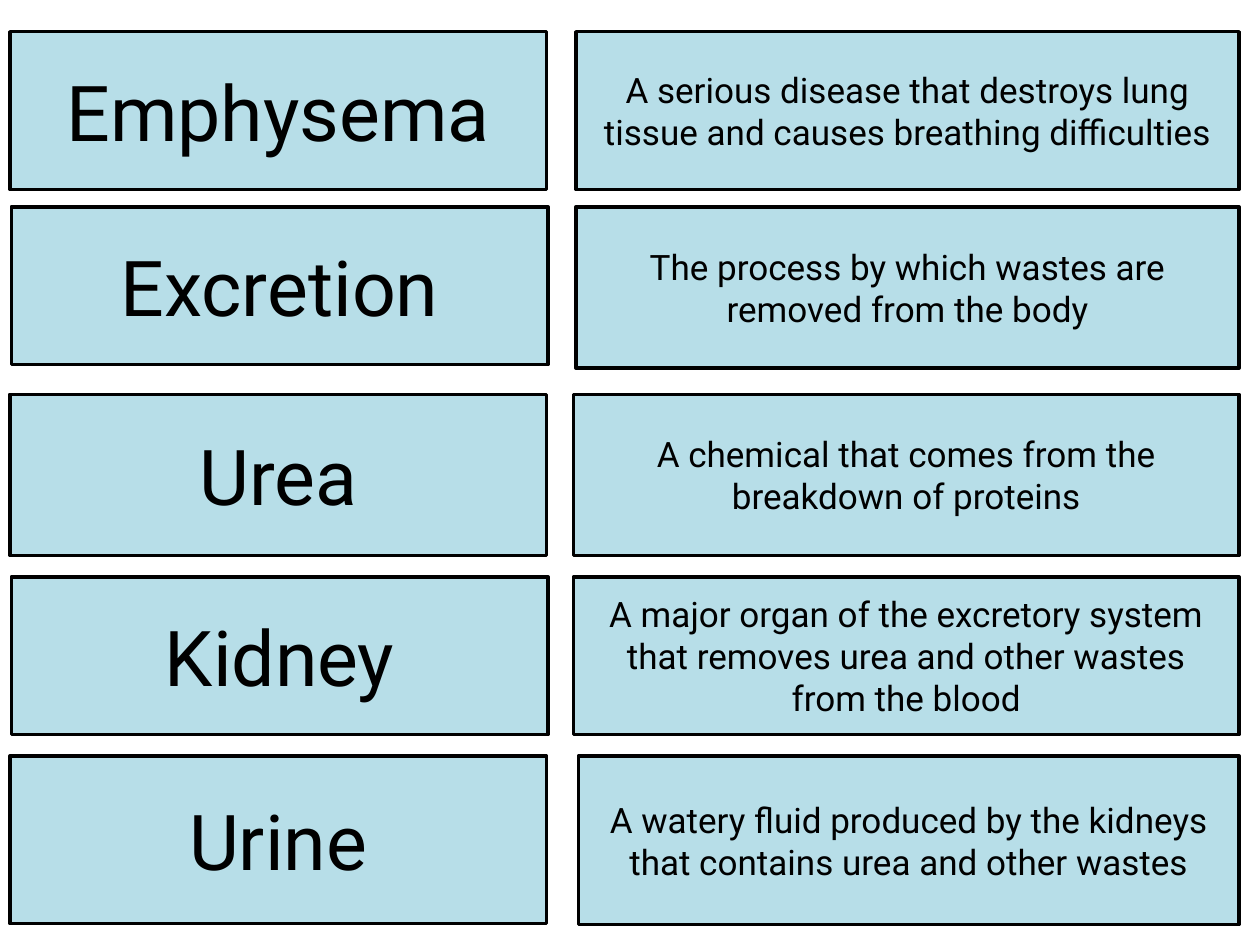
"""Build a slide of vocabulary cards pairing each term with its definition."""
from pptx import Presentation
from pptx import util as u
from pptx.dml.color import RGBColor
from pptx.enum import shapes, text

TERM_WIDTH = 10.82
RIGHT_EDGE = 24.98


def color(value):
    return RGBColor.from_string(value)


def add_card(page, left, top, width, height, wording, size):
    box = page.shapes.add_shape(
        shapes.MSO_SHAPE.FLOWCHART_PROCESS,
        u.Cm(left), u.Cm(top), u.Cm(width), u.Cm(height))
    box.shadow.inherit = False
    box.fill.solid()
    box.fill.fore_color.rgb = color("B7DEE8")
    box.line.color.rgb = color("000000")
    box.line.width = u.Pt(2)
    frame = box.text_frame
    frame.text = wording
    frame.word_wrap = True
    frame.vertical_anchor = text.MSO_ANCHOR.MIDDLE
    para = frame.paragraphs[0]
    para.alignment = text.PP_ALIGN.CENTER
    font = para.runs[0].font
    font.name = "Roboto"
    font.size = u.Pt(size)
    font.color.rgb = color("000000")


deck = Presentation()
deck.slide_width = u.Cm(25.4)
deck.slide_height = u.Cm(19.05)
page = deck.slides.add_slide(deck.slide_layouts[6])

cards = [
    ("Emphysema", 0.2, 3.18, 11.61, 3.18, 0.64,
     "A serious disease that destroys lung tissue and causes breathing difficulties"),
    ("Excretion", 0.23, 3.18, 11.61, 3.25, 4.17,
     "The process by which wastes are removed from the body"),
    ("Urea", 0.2, 3.25, 11.56, 3.25, 7.95,
     "A chemical that comes from the breakdown of proteins"),
    ("Kidney", 0.23, 3.18, 11.56, 3.18, 11.63,
     "A major organ of the excretory system that removes urea and other wastes from the blood"),
    ("Urine", 0.2, 3.38, 11.66, 3.4, 15.24,
     "A watery fluid produced by the kidneys that contains urea and other wastes"),
]
for term, term_left, term_height, meaning_left, meaning_height, top, meaning in cards:
    add_card(page, term_left, top, TERM_WIDTH, term_height, term, 44)
    add_card(page, meaning_left, top, RIGHT_EDGE - meaning_left, meaning_height, meaning, 20)

deck.save("out.pptx")
